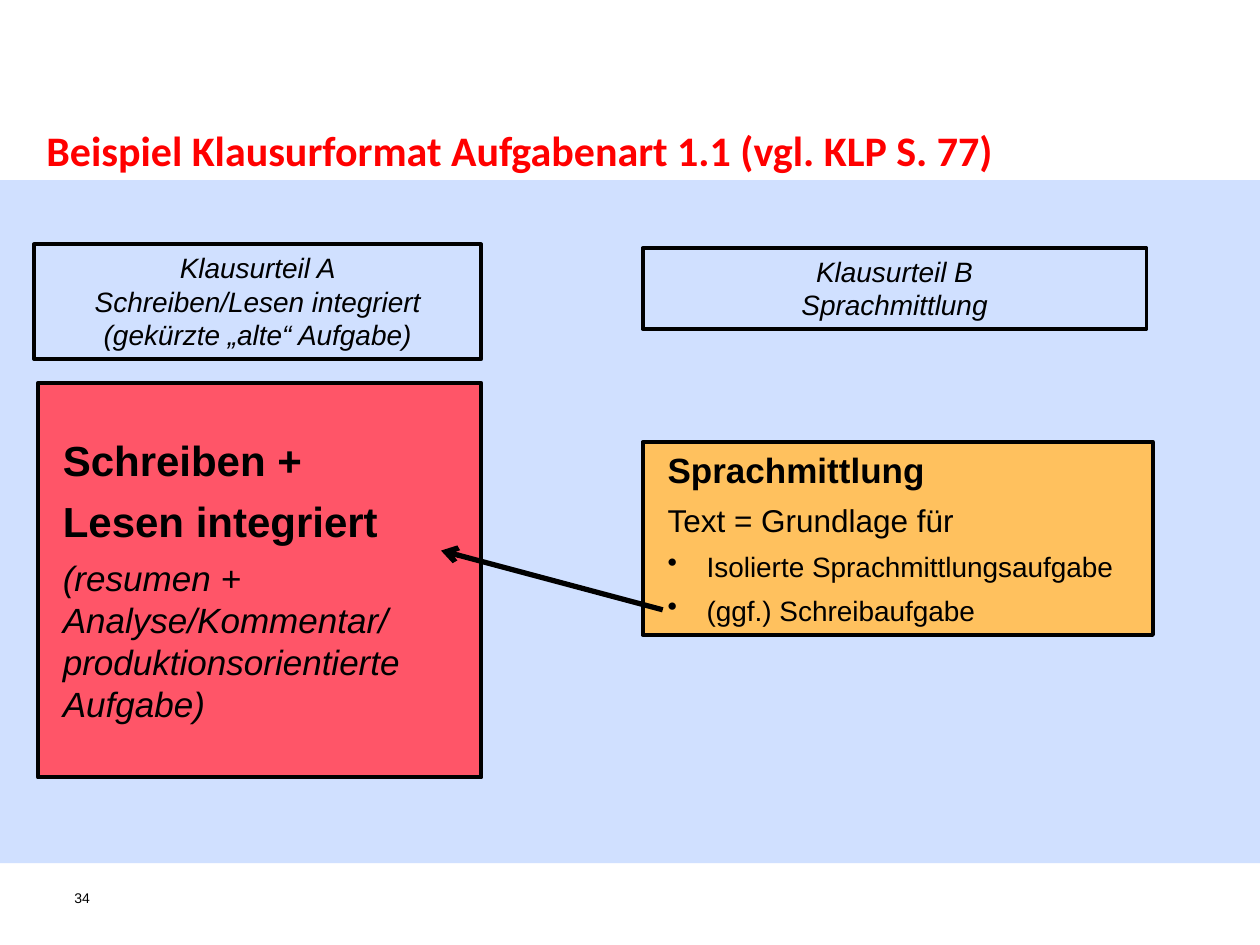
from lxml import etree
from pptx import Presentation
from pptx.dml.color import RGBColor
from pptx.enum import shapes, text
from pptx.oxml.ns import qn
from pptx.util import Inches, Pt

BLACK = "000000"
BAND, BAND_ALPHA = "6699FF", 30
TITLE = "Beispiel Klausurformat Aufgabenart 1.1 (vgl. KLP S. 77)"
PAGE = "34"

# Headings: place, lines
HEADINGS = [
    ((0.27, 1.94, 3.55, 0.91),
     ["Klausurteil A", "Schreiben/Lesen integriert (gekürzte „alte“ Aufgabe)"]),
    ((5.1, 1.97, 4, 0.64), ["Klausurteil B", "Sprachmittlung"]),
]
# Task boxes: place, fill, top inset, lines of (text, size, style)
TASKS = [
    ((0.3, 3.04, 3.52, 3.13), "FF5568", 0.41, [
        ("Schreiben +", 24, "bold"),
        ("Lesen integriert", 24, "bold"),
        ("(resumen + Analyse/Kommentar/ produktionsorientierte Aufgabe)", 20, "italic"),
    ]),
    ((5.1, 3.51, 4.05, 1.53), "FFC15E", 0.05, [
        ("Sprachmittlung", 20, "bold"),
        ("Text = Grundlage für", 18, "plain"),
        ("Isolierte Sprachmittlungsaufgabe", 16, "bullet"),
        ("(ggf.) Schreibaufgabe", 16, "bullet"),
    ]),
]
ARROW = (5.26, 4.84, 3.5, 4.37)


def rgb(value):
    return RGBColor.from_string(value)


def add_rect(place, fill=None, line=None):
    rect = slide.shapes.add_shape(shapes.MSO_SHAPE.RECTANGLE, *map(Inches, place))
    rect.shadow.inherit = False
    if fill:
        rect.fill.solid()
        rect.fill.fore_color.rgb = rgb(fill)
    else:
        rect.fill.background()
    if line:
        rect.line.color.rgb = rgb(line)
        rect.line.width = Pt(2.25)
    else:
        rect.line.fill.background()
    return rect


def set_frame(box, insets):
    frame = box.text_frame
    frame.word_wrap = True
    frame.vertical_anchor = text.MSO_ANCHOR.TOP
    (frame.margin_left, frame.margin_top,
     frame.margin_right, frame.margin_bottom) = map(Inches, insets)
    return frame


def write(frame, lines, align=text.PP_ALIGN.LEFT, face="Arial", color=BLACK,
          after=0, indent=0):
    for i, (words, size, style) in enumerate(lines):
        para = frame.paragraphs[0] if i == 0 else frame.add_paragraph()
        para.text = words
        para.alignment = align
        para.space_after = Pt(after)
        props = para._p.get_or_add_pPr()
        bullet = style == "bullet"
        props.set("marL", str(Inches(0.41 if bullet else indent)))
        props.set("indent", str(Inches(-0.31 if bullet else 0)))
        if bullet:
            etree.SubElement(props, qn("a:buChar")).set("char", "•")
        font = para.font
        font.name, font.size, font.color.rgb = face, Pt(size), rgb(color)
        font.bold, font.italic = style == "bold", style == "italic"


prs = Presentation()
prs.slide_width, prs.slide_height = Inches(10), Inches(7.5)
slide = prs.slides.add_slide(prs.slide_layouts[6])

# Background band
band = add_rect((0, 1.43, 10, 5.42), BAND)
band_color = band.fill._xPr.find(qn("a:solidFill"))[0]
etree.SubElement(band_color, qn("a:alpha")).set("val", str(BAND_ALPHA * 1000))

# Page number and title
page = slide.shapes.add_textbox(*map(Inches, (0.59, 7.06, 0.32, 0.37)))
write(set_frame(page, (0, 0, 0, 0)), [(PAGE, 8, "plain")])
title = slide.shapes.add_textbox(*map(Inches, (0.27, 0.84, 9.65, 0.61)))
write(set_frame(title, (0.1, 0.15, 0.1, 0.05)), [(TITLE, 24, "bold")],
      face="Calibri", color="FF0000")

# Task boxes
for place, fill, top, lines in TASKS:
    frame = set_frame(add_rect(place, fill, BLACK), (0.1, top, 0.1, 0.05))
    write(frame, lines, after=6, indent=0.1)

# Arrow from language mediation to writing
arrow = slide.shapes.add_connector(shapes.MSO_CONNECTOR.STRAIGHT, *map(Inches, ARROW))
arrow.line.color.rgb = rgb(BLACK)
arrow.line.width = Pt(3)
etree.SubElement(arrow.line._get_or_add_ln(), qn("a:tailEnd")).set("type", "arrow")
etree.SubElement(arrow._element.spPr, qn("a:effectLst"))

# Headings
for place, lines in HEADINGS:
    frame = set_frame(add_rect(place, line=BLACK), (0.1, 0.05, 0.1, 0.05))
    write(frame, [(words, 16, "italic") for words in lines],
          align=text.PP_ALIGN.CENTER)

prs.save("out.pptx")
